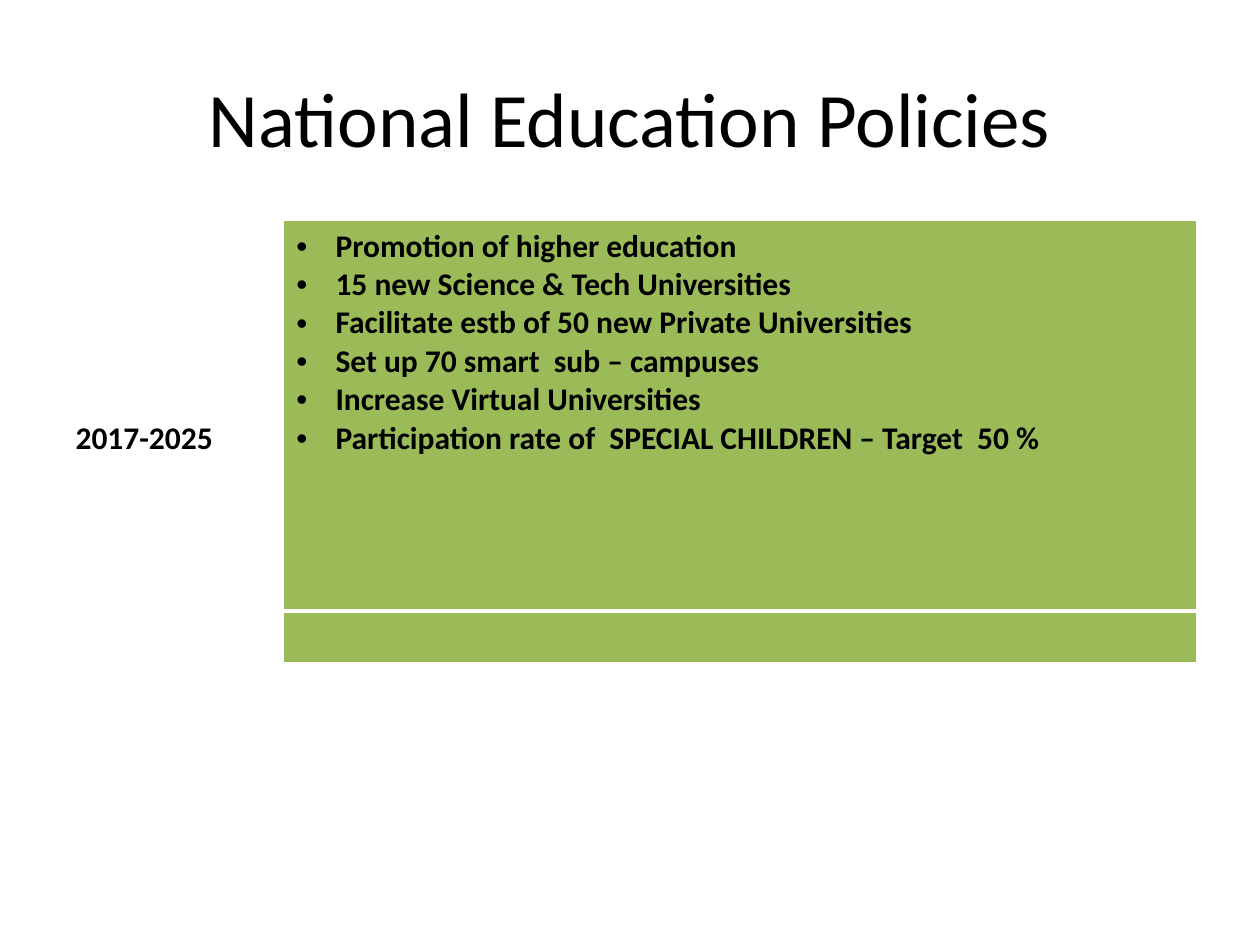
from pptx import Presentation
from pptx.dml.color import RGBColor
from pptx.enum.text import MSO_ANCHOR, PP_ALIGN
from pptx.oxml import parse_xml
from pptx.oxml.ns import nsdecls
from pptx.util import Cm, Pt

COLORS = {"text": "000000", "green": "9BBB59", "white": "FFFFFF"}
POLICIES = [
    "Promotion of higher education",
    "15 new Science & Tech Universities",
    "Facilitate estb of 50 new Private Universities",
    "Set up 70 smart  sub – campuses",
    "Increase Virtual Universities",
    "Participation rate of  SPECIAL CHILDREN – Target  50 %",
]


def style(para, size, bold=False):
    font = para.font
    font.name, font.size, font.bold = "Calibri", Pt(size), bold
    font.color.rgb = RGBColor.from_string(COLORS["text"])


def border(cell, side, width):
    """Append a white line; call before the cell gets its fill."""
    cell._tc.get_or_add_tcPr().append(parse_xml(
        f'<a:ln{side} {nsdecls("a")} w="{Pt(width)}"><a:solidFill>'
        f'<a:srgbClr val="{COLORS["white"]}"/></a:solidFill></a:ln{side}>'))


prs = Presentation()
prs.slide_width, prs.slide_height = Cm(25.4), Cm(19.05)
slide = prs.slides.add_slide(prs.slide_layouts[6])

# Title
title = slide.shapes.add_textbox(Cm(1.27), Cm(0.76), Cm(22.86), Cm(3.18))
frame = title.text_frame
frame.word_wrap = True
frame.vertical_anchor = MSO_ANCHOR.MIDDLE
frame.text = "National Education Policies"
frame.paragraphs[0].alignment = PP_ALIGN.CENTER
style(frame.paragraphs[0], 44)

# Table
table = slide.shapes.add_table(
    2, 2, Cm(1.27), Cm(4.45), Cm(22.86), Cm(8.91)).table
for col, width in zip(table.columns, (4.45, 18.41)):
    col.width = Cm(width)
for row, height in zip(table.rows, (7.87, 1.04)):
    row.height = Cm(height)

for r, row in enumerate(table.rows):
    for cell, fill in zip(row.cells, ("white", "green")):
        thick = "B" if r == 0 else "T"
        for side in "LRTB":
            border(cell, side, 3 if side == thick else 1)
        cell.fill.solid()
        cell.fill.fore_color.rgb = RGBColor.from_string(COLORS[fill])

# Period, level with the last policy
period = table.cell(0, 0)
period.margin_top = Cm(4)
period.text_frame.text = "2017-2025"
style(period.text_frame.paragraphs[0], 18, bold=True)

# Policies
frame = table.cell(0, 1).text_frame
frame.text = "\n".join(POLICIES)
for para in frame.paragraphs:
    props = para._p.get_or_add_pPr()
    props.set("marL", str(Cm(0.79)))
    props.set("indent", str(-Cm(0.79)))
    props.append(parse_xml(f'<a:buFont {nsdecls("a")} typeface="Arial"/>'))
    props.append(parse_xml(f'<a:buChar {nsdecls("a")} char="•"/>'))
    style(para, 18, bold=True)

prs.save("out.pptx")
